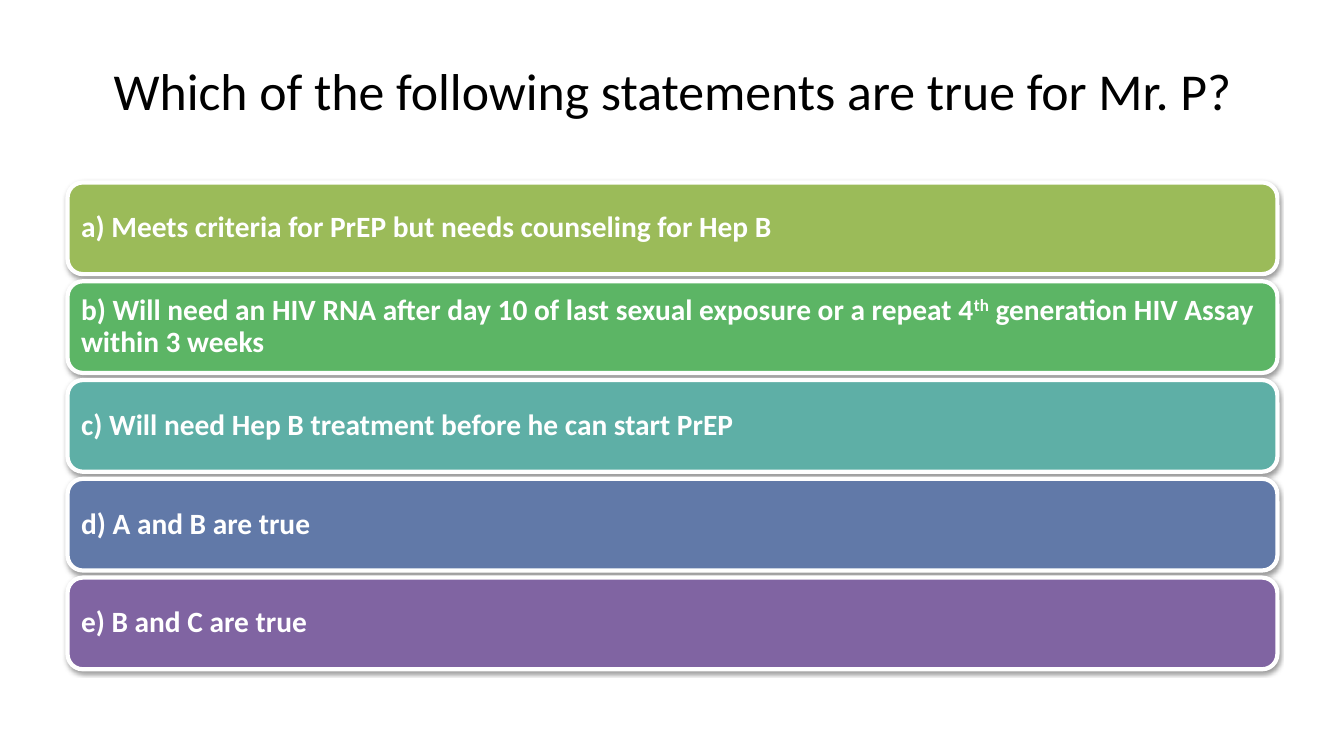
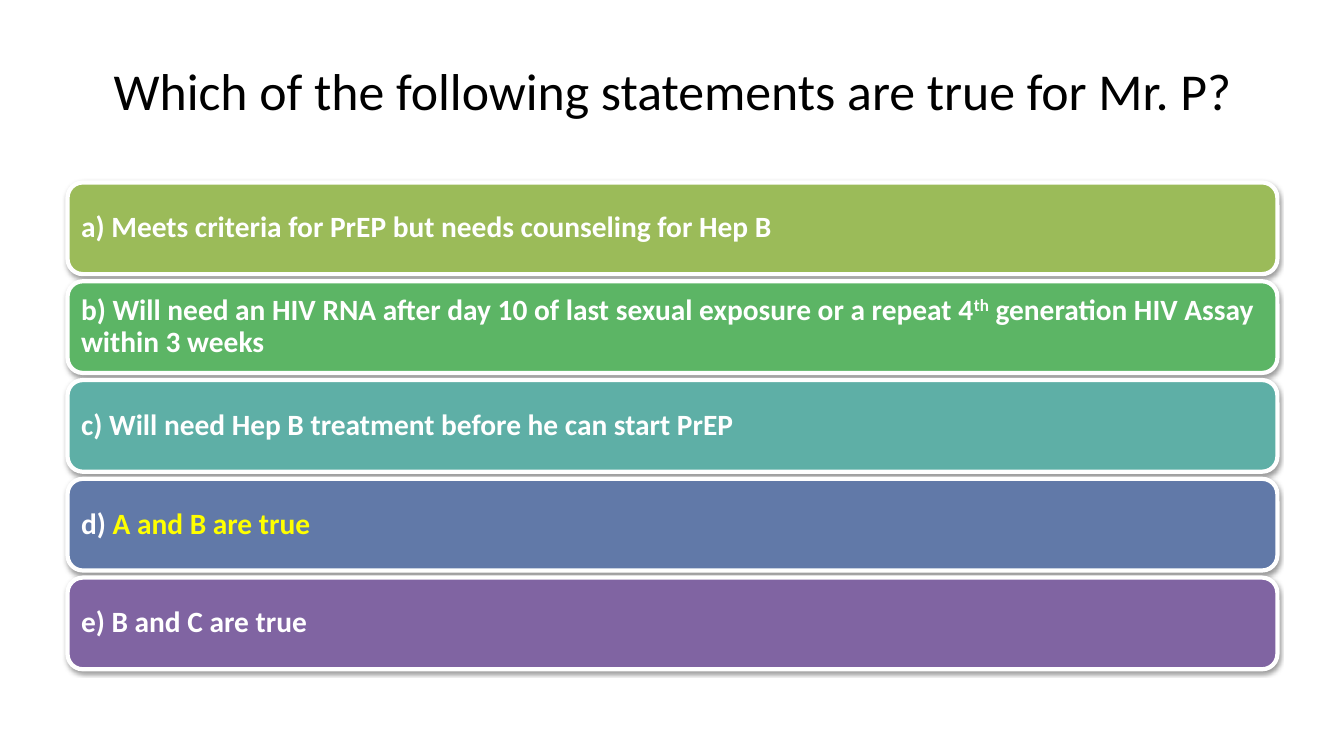
from dataclasses import dataclass

from lxml import etree
from pptx import Presentation
from pptx.dml.color import RGBColor
from pptx.enum.shapes import MSO_SHAPE
from pptx.enum.text import MSO_ANCHOR, MSO_AUTO_SIZE, PP_ALIGN
from pptx.oxml.ns import qn
from pptx.shapes.autoshape import Shape
from pptx.slide import Slide
from pptx.util import Inches, Pt

ROUNDED_RECTANGLE = MSO_SHAPE.ROUNDED_RECTANGLE
MIDDLE = MSO_ANCHOR.MIDDLE
NO_AUTOFIT = MSO_AUTO_SIZE.NONE
LEFT, CENTER = PP_ALIGN.LEFT, PP_ALIGN.CENTER

BLACK = RGBColor(0x00, 0x00, 0x00)
WHITE = RGBColor(0xFF, 0xFF, 0xFF)
YELLOW = RGBColor(0xFF, 0xFF, 0x00)
OLIVE = RGBColor(0x9B, 0xBB, 0x59)
GREEN = RGBColor(0x5C, 0xB5, 0x65)
TEAL = RGBColor(0x5E, 0xAF, 0xA6)
BLUE = RGBColor(0x61, 0x79, 0xA8)
PURPLE = RGBColor(0x80, 0x64, 0xA2)

FONT = "Calibri"
LINE_SPACING = 0.9
TITLE = "Which of the following statements are true for Mr. P?"
TITLE_LAYOUT = 5

MARGIN = 0.67
CONTENT_WIDTH = 12
TITLE_TOP, TITLE_HEIGHT = 0.3, 1.25
BARS_TOP, BAR_HEIGHT, BAR_PITCH = 1.81, 0.91, 0.98
BAR_INSET = Inches(0.09)


@dataclass(frozen=True)
class Answer:
    letter: str
    text: str
    color: RGBColor
    superscript: str = ""
    text_after: str = ""


ANSWERS = (
    Answer("a", "Meets criteria for PrEP but needs counseling for Hep B", OLIVE),
    Answer(
        "b",
        "Will need an HIV RNA after day 10 of last sexual exposure or a repeat 4",
        GREEN,
        "th",
        " generation HIV Assay within 3 weeks",
    ),
    Answer("c", "Will need Hep B treatment before he can start PrEP", TEAL),
    Answer("d", "A and B are true", BLUE),
    Answer("e", "B and C are true", PURPLE),
)
CORRECT_LETTER = "d"


def set_title(slide: Slide) -> None:
    title = slide.shapes.title
    title.left, title.top = Inches(MARGIN), Inches(TITLE_TOP)
    title.width, title.height = Inches(CONTENT_WIDTH), Inches(TITLE_HEIGHT)
    frame = title.text_frame
    frame.text = TITLE
    frame.word_wrap = True
    frame.auto_size = NO_AUTOFIT
    frame.vertical_anchor = MIDDLE
    paragraph = frame.paragraphs[0]
    paragraph.alignment = CENTER
    paragraph.line_spacing = LINE_SPACING
    paragraph.font.name = FONT
    paragraph.font.size = Pt(37)
    paragraph.font.color.rgb = BLACK


def add_soft_shadow(shape: Shape) -> None:
    """Give the shape a faint black shadow falling straight down."""
    shape.shadow.inherit = False
    effects = shape.element.spPr.find(qn("a:effectLst"))
    shadow = etree.SubElement(
        effects,
        qn("a:outerShdw"),
        blurRad=str(Pt(3.1)),
        dist=str(Pt(1.6)),
        dir="5400000",
        rotWithShape="0",
    )
    color = etree.SubElement(shadow, qn("a:srgbClr"), val=str(BLACK))
    etree.SubElement(color, qn("a:alpha"), val="38000")


def write_answer(bar: Shape, answer: Answer, highlighted: bool) -> None:
    frame = bar.text_frame
    frame.word_wrap = True
    frame.vertical_anchor = MIDDLE
    frame.margin_left = frame.margin_right = BAR_INSET
    frame.margin_top = frame.margin_bottom = BAR_INSET
    paragraph = frame.paragraphs[0]
    paragraph.alignment = LEFT
    paragraph.line_spacing = LINE_SPACING
    paragraph.font.name = FONT
    paragraph.font.size = Pt(21)
    paragraph.font.bold = True
    paragraph.font.color.rgb = WHITE

    paragraph.add_run().text = f"{answer.letter}) "
    statement = paragraph.add_run()
    statement.text = answer.text
    if highlighted:
        statement.font.color.rgb = YELLOW
    if answer.superscript:
        raised = paragraph.add_run()
        raised.text = answer.superscript
        raised.font._element.set("baseline", "30000")
        paragraph.add_run().text = answer.text_after


def add_answer_bar(slide: Slide, index: int, answer: Answer, highlighted: bool) -> None:
    bar = slide.shapes.add_shape(
        ROUNDED_RECTANGLE,
        Inches(MARGIN),
        Inches(BARS_TOP + index * BAR_PITCH),
        Inches(CONTENT_WIDTH),
        Inches(BAR_HEIGHT),
    )
    bar.fill.solid()
    bar.fill.fore_color.rgb = answer.color
    bar.line.color.rgb = WHITE
    bar.line.width = Pt(3)
    add_soft_shadow(bar)
    write_answer(bar, answer, highlighted)


def add_question_slide(presentation: Presentation, reveal: bool) -> None:
    """Add the question; with reveal, the correct answer is highlighted."""
    slide = presentation.slides.add_slide(presentation.slide_layouts[TITLE_LAYOUT])
    set_title(slide)
    for index, answer in enumerate(ANSWERS):
        highlighted = reveal and answer.letter == CORRECT_LETTER
        add_answer_bar(slide, index, answer, highlighted)


def main() -> None:
    presentation = Presentation()
    presentation.slide_width = Inches(13.33)
    presentation.slide_height = Inches(7.5)
    for reveal in (False, True):
        add_question_slide(presentation, reveal)
    presentation.save("out.pptx")


if __name__ == "__main__":
    main()
